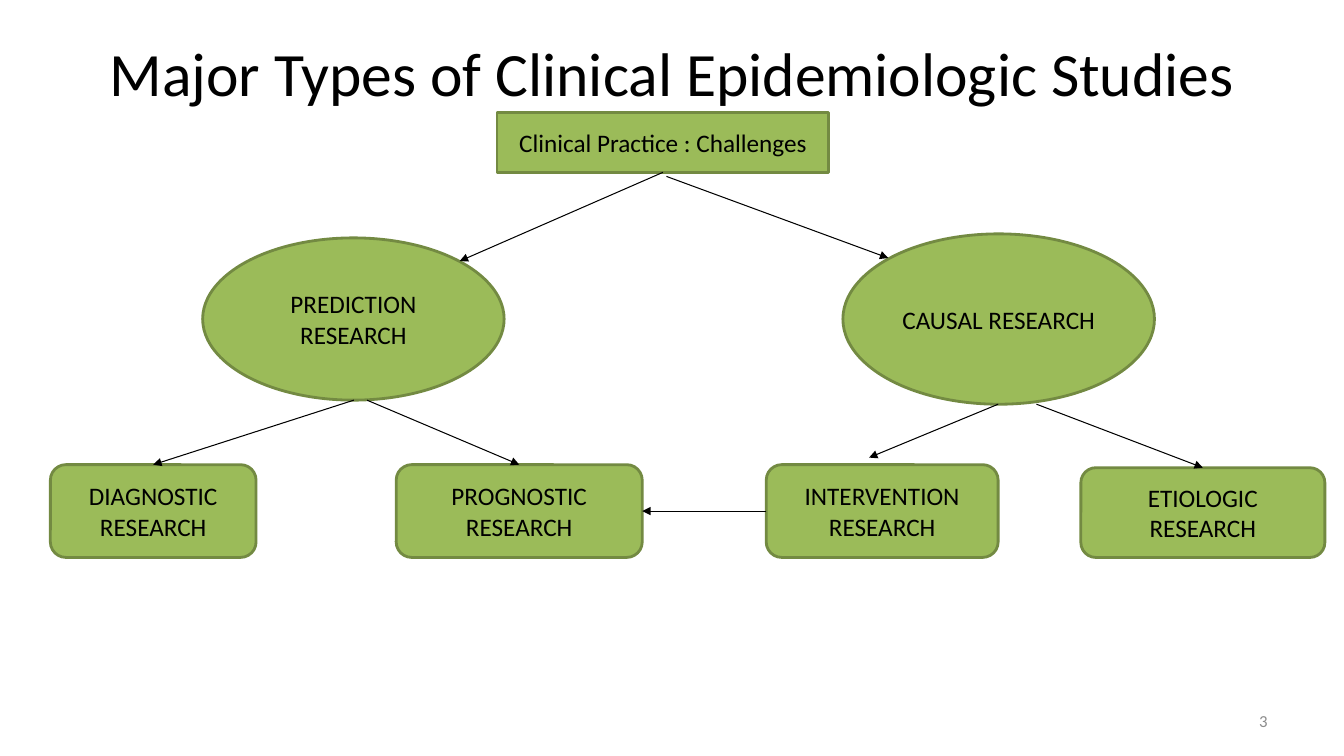
from pptx import Presentation
from pptx.dml.color import RGBColor
from pptx.enum import shapes, text
from pptx.oxml.ns import qn
from pptx.util import Inches, Pt
from lxml import etree

# Content: text, left, top, width, height, size, colour, alignment
LABELS = [
    ("Major Types of Clinical Epidemiologic Studies",
     0.67, 0.18, 12, 1.07, 44, "000000", text.PP_ALIGN.CENTER),
    ("3", 9.56, 6.95, 3.11, 0.4, 12, "8C8C8C", text.PP_ALIGN.RIGHT),
]

# Nodes: text, preset, left, top, width, height
RECTANGLE = shapes.MSO_SHAPE.RECTANGLE
ROUNDED = shapes.MSO_SHAPE.ROUNDED_RECTANGLE
OVAL = shapes.MSO_SHAPE.OVAL
NODES = {
    "practice": ("Clinical Practice : Challenges", RECTANGLE, 4.93, 1.12, 3.29, 0.59),
    "diagnostic": ("DIAGNOSTIC RESEARCH", ROUNDED, 0.5, 4.61, 2.04, 0.92),
    "prognostic": ("PROGNOSTIC RESEARCH", ROUNDED, 3.93, 4.61, 2.44, 0.92),
    "intervention": ("INTERVENTION\nRESEARCH", ROUNDED, 7.6, 4.61, 2.3, 0.92),
    "etiologic": ("ETIOLOGIC RESEARCH", ROUNDED, 10.72, 4.64, 2.42, 0.89),
    "prediction": ("PREDICTION RESEARCH", OVAL, 2.01, 2.36, 2.99, 1.61),
    "causal": ("CAUSAL RESEARCH", OVAL, 8.36, 2.32, 3.09, 1.69),
}

# Arrows: start point, end point, joined start, joined end (node, side)
TOP, LEFT, BOTTOM, RIGHT = range(4)
ARROWS = [
    ((6.57, 1.71), (4.56, 2.59), ("practice", BOTTOM), None),
    ((6.61, 1.75), (8.81, 2.56), None, None),
    ((3.51, 3.97), (1.52, 4.61), None, ("diagnostic", TOP)),
    ((3.64, 3.97), (5.16, 4.61), None, ("prognostic", TOP)),
    ((9.9, 4.01), (8.62, 4.54), None, None),
    ((10.28, 4.01), (11.93, 4.64), None, ("etiologic", TOP)),
    ((7.6, 5.07), (6.38, 5.07), ("intervention", LEFT), ("prognostic", RIGHT)),
]


def color(value):
    return RGBColor.from_string(value)


def write(shape, content, size, font_color, alignment=text.PP_ALIGN.CENTER):
    frame = shape.text_frame
    frame.word_wrap = True
    frame.vertical_anchor = text.MSO_ANCHOR.MIDDLE
    frame.text = content
    for paragraph in frame.paragraphs:
        paragraph.alignment = alignment
        for run in paragraph.runs:
            run.font.name = "Calibri"
            run.font.size = Pt(size)
            run.font.color.rgb = color(font_color)


def add_node(slide, content, preset, *box):
    shape = slide.shapes.add_shape(preset, *map(Inches, box))
    shape.shadow.inherit = False
    shape.fill.solid()
    shape.fill.fore_color.rgb = color("9BBB59")
    shape.line.color.rgb = color("738A42")
    shape.line.width = Pt(2)
    write(shape, content, 18, "000000")
    return shape


def add_arrow(slide, nodes, start, end, source, target):
    arrow = slide.shapes.add_connector(
        shapes.MSO_CONNECTOR.STRAIGHT, *map(Inches, start + end))
    if source:
        arrow.begin_connect(nodes[source[0]], source[1])
    if target:
        arrow.end_connect(nodes[target[0]], target[1])
    arrow.line.color.rgb = color("000000")
    arrow.line.width = Pt(0.75)
    etree.SubElement(arrow.line._get_or_add_ln(), qn("a:tailEnd"), type="triangle")
    etree.SubElement(arrow._element.spPr, qn("a:effectLst"))


def main():
    presentation = Presentation()
    presentation.slide_width = Inches(13.33)
    presentation.slide_height = Inches(7.5)
    slide = presentation.slides.add_slide(presentation.slide_layouts[6])

    # Title and slide number
    for content, left, top, width, height, *style in LABELS:
        label = slide.shapes.add_textbox(*map(Inches, (left, top, width, height)))
        write(label, content, *style)

    # Diagram
    nodes = {name: add_node(slide, *node) for name, node in NODES.items()}
    for arrow in ARROWS:
        add_arrow(slide, nodes, *arrow)

    presentation.save("out.pptx")


if __name__ == "__main__":
    main()
